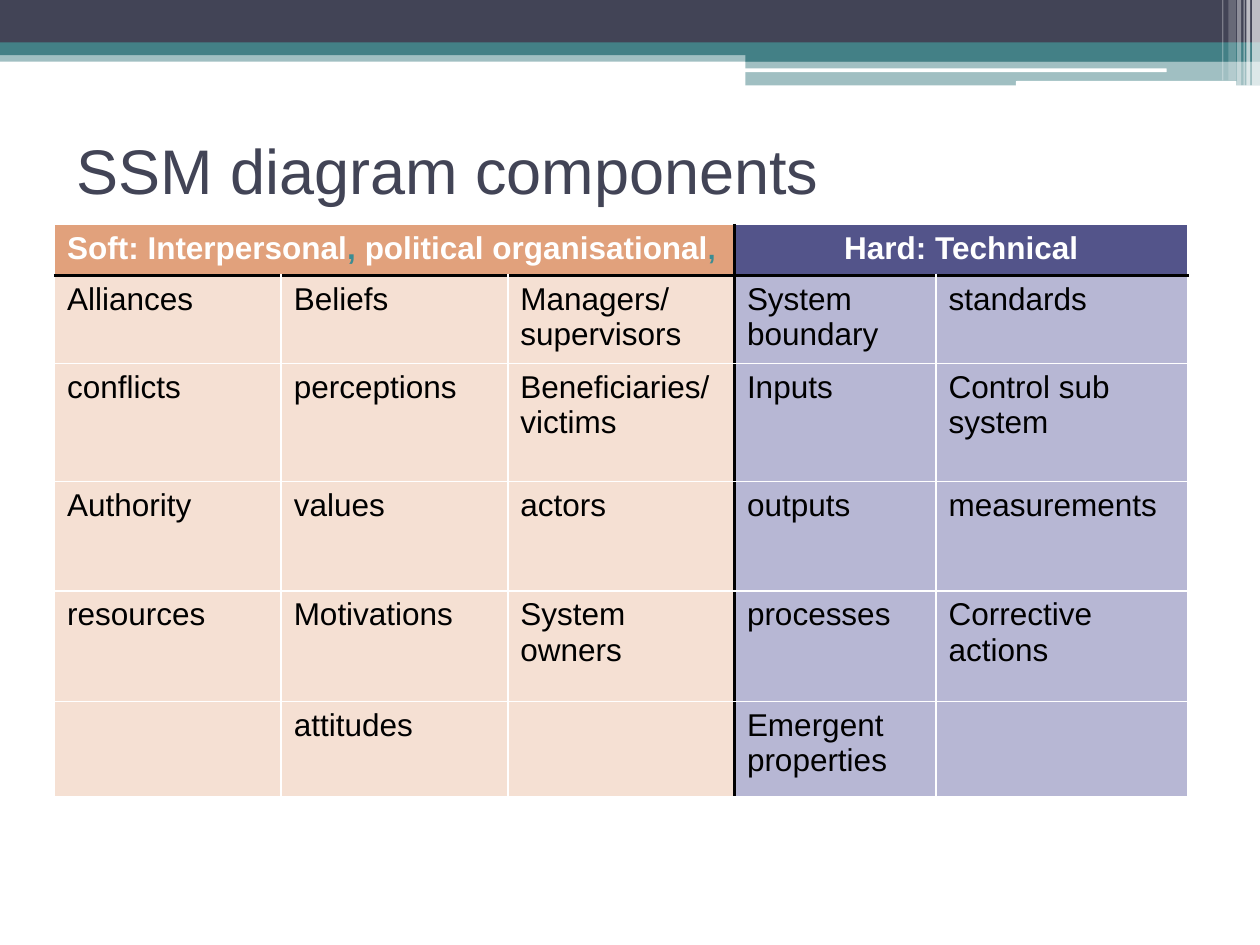
import dataclasses
import typing

import lxml.etree
import pptx
import pptx.dml.color
import pptx.enum.shapes
import pptx.enum.text
import pptx.oxml.ns
import pptx.util

Pt = pptx.util.Pt
RGBColor = pptx.dml.color.RGBColor
ShapeType = pptx.enum.shapes.MSO_SHAPE
Align = pptx.enum.text.PP_ALIGN
qn = pptx.oxml.ns.qn

FONT = "Arial"
WHITE = RGBColor(0xFF, 0xFF, 0xFF)
BLACK = RGBColor(0, 0, 0)
SLATE = RGBColor(0x42, 0x44, 0x56)
TEAL = RGBColor(0x43, 0x80, 0x86)
COMMA_TEAL = RGBColor(0x3C, 0x8C, 0x93)
SOFT_HEADER = RGBColor(0xE1, 0xA1, 0x7C)
SOFT_BODY = RGBColor(0xF5, 0xE0, 0xD3)
HARD_HEADER = RGBColor(0x53, 0x54, 0x8A)
HARD_BODY = RGBColor(0xB7, 0xB7, 0xD4)


@dataclasses.dataclass(frozen=True)
class Band:
    left: float
    top: float
    width: float
    height: float
    color: RGBColor
    opacity: int = 100
    rounded: bool = False


@dataclasses.dataclass(frozen=True)
class TextRun:
    text: str
    color: RGBColor = BLACK
    size: float = 18
    bold: bool = False


@dataclasses.dataclass(frozen=True)
class Header:
    first: int
    last: int
    fill: RGBColor
    align: Align
    runs: tuple[TextRun, ...]


BANDS = (
    Band(0, 28.8, 720, 6.5, TEAL, 50),
    Band(0, 0, 720, 24.5, SLATE),
    Band(0, 24.3, 720, 7.2, TEAL),
    Band(426, 28, 294, 7.2, TEAL),
    Band(426, 34.8, 294, 14, TEAL, 50),
    Band(425.5, 39.1, 241.2, 2.2, WHITE, rounded=True),
    Band(580.5, 46.3, 126, 2.9, WHITE, rounded=True),
    Band(715.5, 0, 4.5, 49, WHITE, 65),
    Band(712.2, 0, 2.2, 49, WHITE, 65),
    Band(710.6, 0, 0.7, 49, WHITE, 60),
    Band(707, 0, 2.2, 49, WHITE, 40),
    Band(702, 0, 4.3, 46, WHITE, 20),
    Band(698.4, 0, 0.7, 46, WHITE, 30),
)

COLUMN_WIDTHS = (129.5, 129.5, 129.5, 115.2, 144)
ROW_HEIGHTS = (29, 49, 67.5, 62.5, 63.2, 54.2)
SOFT_COLUMNS = 3
COMPONENTS = (
    ("Alliances", "Beliefs", "Managers/supervisors", "System boundary", "standards"),
    ("conflicts", "perceptions", "Beneficiaries/victims", "Inputs", "Control sub system"),
    ("Authority", "values", "actors", "outputs", "measurements"),
    ("resources", "Motivations", "System owners", "processes", "Corrective actions"),
    ("", "attitudes", "", "Emergent properties", ""),
)
HEADERS = (
    Header(0, 2, SOFT_HEADER, Align.LEFT, (
        TextRun("Soft: Interpersonal", WHITE, bold=True),
        TextRun(", ", COMMA_TEAL, bold=True),
        TextRun("political organisational", WHITE, bold=True),
        TextRun(",", COMMA_TEAL, 16, True),
    )),
    Header(3, 4, HARD_HEADER, Align.CENTER, (
        TextRun("Hard: Technical", WHITE, bold=True),
    )),
)


def draw_band(slide: typing.Any, band: Band) -> None:
    kind = ShapeType.ROUNDED_RECTANGLE if band.rounded else ShapeType.RECTANGLE
    shape = slide.shapes.add_shape(
        kind, Pt(band.left), Pt(band.top), Pt(band.width), Pt(band.height)
    )
    shape.shadow.inherit = False
    shape.line.fill.background()
    shape.fill.solid()
    shape.fill.fore_color.rgb = band.color
    if band.opacity < 100:
        color = shape._element.spPr.find(qn("a:solidFill"))[0]
        lxml.etree.SubElement(color, qn("a:alpha"), val=str(band.opacity * 1000))


def add_runs(paragraph: typing.Any, runs: typing.Iterable[TextRun]) -> None:
    for item in runs:
        run = paragraph.add_run()
        run.text = item.text
        run.font.name = FONT
        run.font.size = Pt(item.size)
        run.font.bold = item.bold
        run.font.color.rgb = item.color


def draw_title(slide: typing.Any) -> None:
    box = slide.shapes.add_textbox(Pt(36.7), Pt(54.7), Pt(648), Pt(84.2))
    frame = box.text_frame
    frame.word_wrap = True
    frame.vertical_anchor = pptx.enum.text.MSO_ANCHOR.MIDDLE
    add_runs(frame.paragraphs[0], [TextRun("SSM diagram components", SLATE, 36)])


def style_cell(cell: typing.Any, fill: RGBColor, row: int, first: int, last: int) -> None:
    cell.fill.solid()
    cell.fill.fore_color.rgb = fill
    heavy_edges = {
        "a:lnL": first == SOFT_COLUMNS,
        "a:lnR": last == SOFT_COLUMNS - 1,
        "a:lnT": row == 1,
        "a:lnB": row == 0,
    }
    properties = cell._tc.get_or_add_tcPr()
    for position, (edge, heavy) in enumerate(heavy_edges.items()):
        line = lxml.etree.Element(qn(edge), w=str(Pt(2.25 if heavy else 1)))
        solid = lxml.etree.SubElement(line, qn("a:solidFill"))
        color = BLACK if heavy else WHITE
        lxml.etree.SubElement(solid, qn("a:srgbClr"), val=str(color))
        properties.insert(position, line)


def draw_table(slide: typing.Any) -> None:
    table = slide.shapes.add_table(
        len(ROW_HEIGHTS), len(COLUMN_WIDTHS), Pt(31.2), Pt(128.3),
        Pt(sum(COLUMN_WIDTHS)), Pt(sum(ROW_HEIGHTS)),
    ).table
    for column, width in zip(table.columns, COLUMN_WIDTHS):
        column.width = Pt(width)
    for row, height in zip(table.rows, ROW_HEIGHTS):
        row.height = Pt(height)
    for header in HEADERS:
        cell = table.cell(0, header.first)
        cell.merge(table.cell(0, header.last))
        style_cell(cell, header.fill, 0, header.first, header.last)
        for column in range(header.first + 1, header.last + 1):
            style_cell(table.cell(0, column), header.fill, 0, column, column)
        paragraph = cell.text_frame.paragraphs[0]
        paragraph.alignment = header.align
        add_runs(paragraph, header.runs)
    for row, names in enumerate(COMPONENTS, start=1):
        for column, name in enumerate(names):
            cell = table.cell(row, column)
            fill = SOFT_BODY if column < SOFT_COLUMNS else HARD_BODY
            style_cell(cell, fill, row, column, column)
            if name:
                add_runs(cell.text_frame.paragraphs[0], [TextRun(name)])


def main() -> None:
    presentation = pptx.Presentation()
    presentation.slide_width = Pt(720)
    presentation.slide_height = Pt(540)
    slide = presentation.slides.add_slide(presentation.slide_layouts[6])
    for band in BANDS:
        draw_band(slide, band)
    draw_title(slide)
    draw_table(slide)
    presentation.save("out.pptx")


if __name__ == "__main__":
    main()
